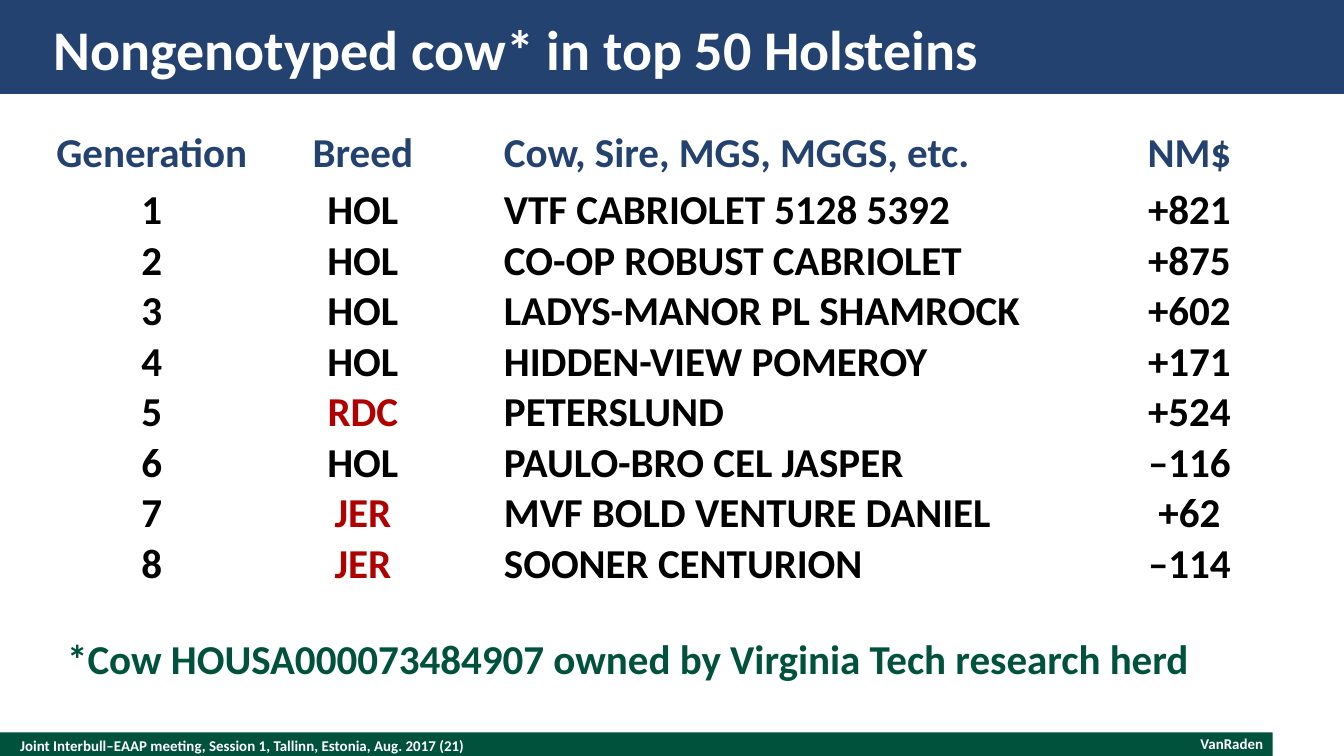
import dataclasses

import pptx
import pptx.dml.color
import pptx.enum.shapes
import pptx.enum.text
import pptx.util

Inches = pptx.util.Inches
Pt = pptx.util.Pt
Align = pptx.enum.text.PP_ALIGN
Anchor = pptx.enum.text.MSO_ANCHOR


@dataclasses.dataclass(frozen=True)
class Theme:
    """Colours, font and type sizes of the deck."""
    font: str = "Calibri"
    navy: str = "244270"
    green: str = "00523C"
    red: str = "B00000"
    black: str = "000000"
    white: str = "FFFFFF"
    title_size: int = 30
    body_size: int = 22
    footer_size: int = 8


THEME = Theme()
HEADINGS = ("Generation", "Breed", "Cow, Sire, MGS, MGGS, etc.", "NM$")
ANCESTORS = (
    ("HOL", "VTF CABRIOLET 5128 5392", "+821"),
    ("HOL", "CO-OP ROBUST CABRIOLET", "+875"),
    ("HOL", "LADYS-MANOR PL SHAMROCK", "+602"),
    ("HOL", "HIDDEN-VIEW POMEROY", "+171"),
    ("RDC", "PETERSLUND", "+524"),
    ("HOL", "PAULO-BRO CEL JASPER", "–116"),
    ("JER", "MVF BOLD VENTURE DANIEL", "+62"),
    ("JER", "SOONER CENTURION", "–114"),
)
COLUMN_WIDTHS = (1.54, 1.6, 4.95, 0.8)
NAME_COLUMN = 2


def write(para, text, size, color, align=Align.LEFT, spacing=None):
    """Add one bold run to a paragraph."""
    para.alignment = align
    if spacing:
        para.line_spacing = Pt(spacing)
    span = para.add_run()
    span.text = text
    span.font.name = THEME.font
    span.font.size = Pt(size)
    span.font.bold = True
    span.font.color.rgb = pptx.dml.color.RGBColor.from_string(color)


def set_frame(frame, anchor):
    """Wrap a text frame, anchor it and clear its margins."""
    frame.word_wrap = True
    frame.vertical_anchor = anchor
    frame.margin_left = frame.margin_top = frame.margin_right = frame.margin_bottom = 0


def add_band(page, left, top, width, height, color):
    """Draw a plain filled band."""
    band = page.shapes.add_shape(
        pptx.enum.shapes.MSO_SHAPE.RECTANGLE,
        Inches(left), Inches(top), Inches(width), Inches(height))
    band.shadow.inherit = False
    band.fill.solid()
    band.fill.fore_color.rgb = pptx.dml.color.RGBColor.from_string(color)
    band.line.fill.background()


def add_label(page, left, top, width, height, text, size, color,
              align=Align.LEFT, anchor=Anchor.MIDDLE, spacing=None):
    """Place a one-paragraph text box."""
    box = page.shapes.add_textbox(
        Inches(left), Inches(top), Inches(width), Inches(height))
    set_frame(box.text_frame, anchor)
    write(box.text_frame.paragraphs[0], text, size, color, align, spacing)


def add_header(page, left, top, width, height):
    """Draw the header band with the title placeholder on it."""
    add_band(page, left, top, width, height, THEME.navy)
    title = page.shapes.title
    title.left, title.top = Inches(left + 0.4), Inches(top + 0.1)
    title.width, title.height = Inches(width - 0.8), Inches(0.52)
    set_frame(title.text_frame, Anchor.MIDDLE)
    title.text_frame.auto_size = pptx.enum.text.MSO_AUTO_SIZE.NONE
    write(title.text_frame.paragraphs[0], "Nongenotyped cow* in top 50 Holsteins",
          THEME.title_size, THEME.white)
    title.element.getparent().append(title.element)


def add_footer(page, left, top, width, height):
    """Draw the footer band with the meeting and the speaker."""
    add_band(page, left, top, width, height, THEME.green)
    add_label(page, left + 0.15, top, 6.5, height,
              "Joint Interbull–EAAP meeting, Session 1, Tallinn, Estonia, Aug. 2017 (21)",
              THEME.footer_size, THEME.white)
    add_label(page, left + width - 2.27, top + 0.02, 2.2, 0.13, "VanRaden",
              THEME.footer_size, THEME.white, Align.RIGHT)


def cell_color(row, text):
    """Choose the text colour of a table cell."""
    if row == 0:
        return THEME.navy
    return THEME.red if text in ("RDC", "JER") else THEME.black


def add_pedigree(page, left, top, width, height):
    """Place the table of ancestors by generation."""
    rows = [HEADINGS]
    rows += [(str(number), *entry) for number, entry in enumerate(ANCESTORS, 1)]
    table = page.shapes.add_table(
        len(rows), len(HEADINGS),
        Inches(left), Inches(top), Inches(width), Inches(height)).table
    table.first_row = table.horz_banding = False
    for column, column_width in zip(table.columns, COLUMN_WIDTHS):
        column.width = Inches(column_width)
    header_height = 0.4
    for row, texts in enumerate(rows):
        table.rows[row].height = Inches(
            (height - header_height) / len(ANCESTORS) if row else header_height)
        for column, text in enumerate(texts):
            cell = table.cell(row, column)
            is_name = column == NAME_COLUMN
            cell.fill.background()
            cell.margin_left = Inches(0.25 if is_name else 0)
            cell.margin_top = cell.margin_right = 0
            cell.margin_bottom = Inches(0 if row or is_name else 0.05)
            write(cell.text_frame.paragraphs[0], text, THEME.body_size,
                  cell_color(row, text), Align.LEFT if is_name else Align.CENTER,
                  27 if row else 25)


def main():
    """Build the deck and save it."""
    deck = pptx.Presentation()
    deck.slide_width = Inches(10)
    deck.slide_height = deck.slide_width * 9 // 16
    page = deck.slides.add_slide(deck.slide_layouts[5])
    add_footer(page, 0, 5.45, 9.47, 0.2)
    add_header(page, 0, 0, 10, 0.7)
    add_pedigree(page, 0.36, 0.98, 8.9, 3.4)
    add_label(page, 0.5, 4.72, 9, 0.36,
              "*Cow HOUSA000073484907 owned by Virginia Tech research herd",
              THEME.body_size, THEME.green, anchor=Anchor.TOP, spacing=26)
    deck.save("out.pptx")


if __name__ == "__main__":
    main()
